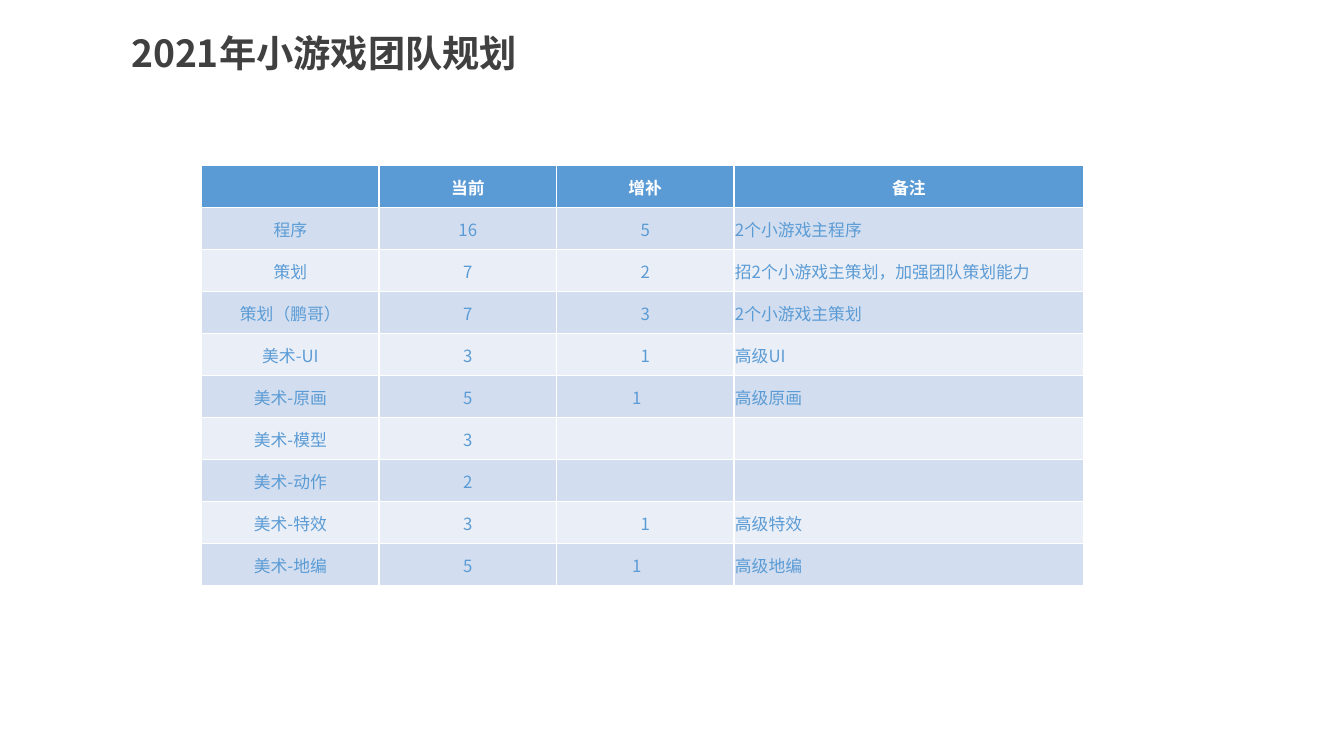
from lxml import etree
from pptx import Presentation
from pptx.dml.color import RGBColor
from pptx.enum.text import MSO_ANCHOR, MSO_AUTO_SIZE, PP_ALIGN
from pptx.oxml.ns import qn
from pptx.util import Inches, Pt

LEFT, CENTER = PP_ALIGN.LEFT, PP_ALIGN.CENTER
TOP, MIDDLE = MSO_ANCHOR.TOP, MSO_ANCHOR.MIDDLE
GROW = MSO_AUTO_SIZE.SHAPE_TO_FIT_TEXT

FONT = "Noto Sans CJK SC"
COLORS = {
    "title": "404040",
    "accent": "5B9BD5",
    "header_text": "FFFFFF",
    "odd_row": "D2DEEF",
    "even_row": "EAEFF7",
}

HEADCOUNT = [
    ("", "当前", "增补", "备注"),
    ("程序", "16", "5", "2个小游戏主程序"),
    ("策划", "7", "2", "招2个小游戏主策划，加强团队策划能力"),
    ("策划（鹏哥）", "7", "3", "2个小游戏主策划"),
    ("美术-UI", "3", "1", "高级UI　"),
    ("美术-原画", "5", "1　", "高级原画　"),
    ("美术-模型", "3", "", ""),
    ("美术-动作", "2", "", ""),
    ("美术-特效", "3", "1", "高级特效　"),
    ("美术-地编", "5", "1　", "高级地编　"),
]
COLUMN_WIDTHS = [1.76, 1.76, 1.76, 3.47]
TABLE_HEIGHT = 4.17
NOTE_COLUMN = 3


def add_run(paragraph, text, size, color, bold):
    run = paragraph.add_run()
    run.text = text
    font = run.font
    font.name, font.size, font.bold = FONT, Pt(size), bold
    font.color.rgb = RGBColor.from_string(COLORS[color])
    # East Asian characters take their own typeface
    etree.SubElement(run._r.get_or_add_rPr(), qn("a:ea")).set("typeface", FONT)


prs = Presentation()
prs.slide_width, prs.slide_height = Inches(13.33), Inches(7.5)
slide = prs.slides.add_slide(prs.slide_layouts[5])

# Title
title = slide.shapes.title
title.left, title.top = Inches(1.2), Inches(0.3)
title.width, title.height = Inches(4.08), Inches(0.55)
heading = title.text_frame
heading.word_wrap = True
heading.auto_size = GROW
heading.vertical_anchor = TOP
heading.margin_top = Inches(0.08)
heading.paragraphs[0].alignment = LEFT
heading.paragraphs[0].line_spacing = 0.83
add_run(heading.paragraphs[0], "2021年小游戏团队规划", 26.6, "title", True)

# Headcount table
table = slide.shapes.add_table(
    len(HEADCOUNT), len(COLUMN_WIDTHS), Inches(2), Inches(1.64),
    Inches(sum(COLUMN_WIDTHS)), Inches(TABLE_HEIGHT)).table
for column, width in zip(table.columns, COLUMN_WIDTHS):
    column.width = Inches(width)

for r, entries in enumerate(HEADCOUNT):
    is_header = r == 0
    band = "accent" if is_header else "odd_row" if r % 2 else "even_row"
    text_color = "header_text" if is_header else "accent"
    for c, entry in enumerate(entries):
        cell = table.cell(r, c)
        cell.fill.solid()
        cell.fill.fore_color.rgb = RGBColor.from_string(COLORS[band])
        cell.vertical_anchor = MIDDLE
        cell.margin_left = cell.margin_right = cell.margin_top = Inches(0.01)
        cell.margin_bottom = 0
        if entry:
            paragraph = cell.text_frame.paragraphs[0]
            is_note = c == NOTE_COLUMN and not is_header
            paragraph.alignment = LEFT if is_note else CENTER
            add_run(paragraph, entry, 12, text_color, is_header)

prs.save("out.pptx")
